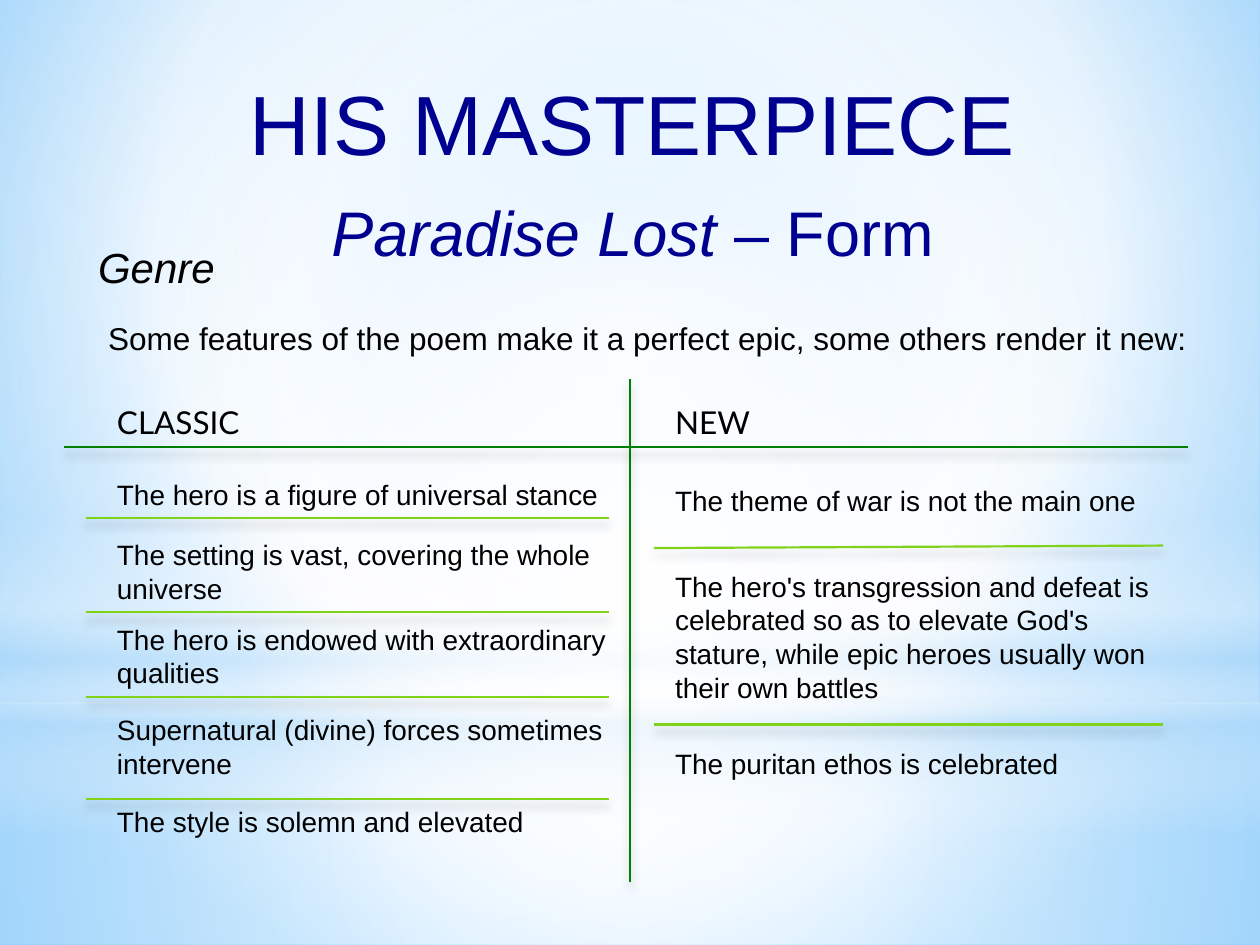
from lxml import etree
from pptx import Presentation
from pptx.dml.color import RGBColor
from pptx.enum.shapes import MSO_CONNECTOR, MSO_SHAPE
from pptx.enum.text import MSO_AUTO_SIZE, PP_ALIGN
from pptx.oxml import parse_xml
from pptx.oxml.ns import nsdecls, qn
from pptx.util import Inches, Pt

STRAIGHT = MSO_CONNECTOR.STRAIGHT
RECTANGLE = MSO_SHAPE.RECTANGLE
OVAL = MSO_SHAPE.OVAL
FIT_SHAPE = MSO_AUTO_SIZE.SHAPE_TO_FIT_TEXT
CENTER = PP_ALIGN.CENTER

NAVY, BLACK, GREEN, LIME = "000090", "000000", "008000", "81D31A"
WHITE, PALE = "FFFFFF", "B4DCFA"
MIDDLE = (50, 50, 50, 50)

CLASSIC_ROWS = [
    (0.59, "The hero is a figure of universal stance"),
    (1.07, "The setting is vast, covering the whole universe"),
    (1.74, "The hero is endowed with extraordinary qualities"),
    (2.46, "Supernatural (divine) forces sometimes intervene"),
    (3.19, "The style is solemn and elevated"),
]
NEW_ROWS = [
    (0.64, "The theme of war is not the main one"),
    (1.32, "The hero's transgression and defeat is celebrated so as to elevate "
           "God's stature, while epic heroes usually won their own battles"),
    (2.73, "The puritan ethos is celebrated"),
]
CLASSIC_RULES = [(y, y) for y in (0.96, 1.71, 2.38, 3.19)]
NEW_RULES = [(1.2, 1.18), (2.6, 2.6)]


def color(code):
    return RGBColor.from_string(code)


def gradient(stops, focus=None):
    marks = "".join(
        f'<a:gs pos="{place * 1000}"><a:srgbClr val="{code}">'
        f'<a:alpha val="{opacity * 1000}"/></a:srgbClr></a:gs>'
        for place, code, opacity in stops)
    if focus:
        sides = " ".join(f'{side}="{value * 1000}"' for side, value in zip("ltrb", focus))
        shade = f'<a:path path="circle"><a:fillToRect {sides}/></a:path>'
    else:
        shade = '<a:lin ang="5400000" scaled="0"/>'
    return (f'<a:gradFill {nsdecls("a")} rotWithShape="1">'
            f'<a:gsLst>{marks}</a:gsLst>{shade}</a:gradFill>')


def add_glow(page, kind, box, stops, focus=None):
    glow = page.shapes.add_shape(kind, *map(Inches, box))
    glow.shadow.inherit = False
    glow.line.fill.background()
    geometry = glow.element.spPr.find(qn("a:prstGeom"))
    geometry.addnext(parse_xml(gradient(stops, focus)))


def add_backdrop(page, box):
    left, top, width, height = box
    stops = [(0, "9ED5FF", 100), (60, WHITE, 100), (100, "5BB9FF", 100)]
    page.element.cSld.insert(0, parse_xml(
        f'<p:bg {nsdecls("p", "a")}><p:bgPr>{gradient(stops, (20, 10, 20, 60))}'
        '<a:effectLst/></p:bgPr></p:bg>'))
    horizon = 5.58
    add_glow(page, RECTANGLE, (left, top + horizon, width, height - horizon),
             [(0, WHITE, 91), (37, WHITE, 76), (100, PALE, 79)], MIDDLE)
    add_glow(page, RECTANGLE, (left, top, width, horizon),
             [(0, WHITE, 89), (48, WHITE, 62), (100, PALE, 79)], MIDDLE)
    add_glow(page, RECTANGLE, (left, top + 4.12, width, 2.5),
             [(0, WHITE, 0), (29, WHITE, 30), (45, PALE, 40),
              (55, WHITE, 26), (65, PALE, 60), (100, WHITE, 0)])
    add_glow(page, OVAL, (left, top + 1.75, width, horizon),
             [(0, WHITE, 100), (56, WHITE, 0)], MIDDLE)


def add_span(para, text, size, font="Arial", code=BLACK, italic=False):
    span = para.add_run()
    span.text = text
    span.font.size = Pt(size)
    span.font.name = font
    span.font.italic = italic
    span.font.color.rgb = color(code)


def add_frame(page, box):
    frame = page.shapes.add_textbox(*map(Inches, box)).text_frame
    frame.word_wrap = True
    return frame


def add_label(page, box, text, size, font="Arial", italic=False):
    frame = add_frame(page, box)
    frame.auto_size = FIT_SHAPE
    add_span(frame.paragraphs[0], text, size, font, italic=italic)


def add_rule(page, start, end, code):
    rule = page.shapes.add_connector(STRAIGHT, *map(Inches, start + end))
    rule.line.color.rgb = color(code)
    rule.line.width = Pt(1.25)
    effects = etree.SubElement(rule.element.spPr, qn("a:effectLst"))
    shadow = etree.SubElement(effects, qn("a:outerShdw"), blurRad=str(Pt(5)),
                              dist=str(Pt(4)), dir="5400000", rotWithShape="0")
    tint = etree.SubElement(shadow, qn("a:srgbClr"), val=BLACK)
    etree.SubElement(tint, qn("a:alpha"), val="20000")


def add_heading(page, box):
    frame = add_frame(page, box)
    title = frame.paragraphs[0]
    title.space_after = Pt(3)
    add_span(title, "HIS MASTERPIECE", 48, code=NAVY)
    subtitle = frame.add_paragraph()
    subtitle.space_before = Pt(9)
    add_span(subtitle, "Paradise Lost ", 36, code=NAVY, italic=True)
    add_span(subtitle, "– Form", 36, code=NAVY)
    for para in frame.paragraphs:
        para.alignment = CENTER


def add_introduction(page, box):
    left, top, width, height = box
    add_label(page, (left, top, width, 0.51), "Genre", 24, italic=True)
    add_label(page, (left + 0.08, top + 0.61, width, 0.4),
              "Some features of the poem make it a perfect epic, "
              "some others render it new:", 18)


def add_column(page, box, heading, rows, rules, rule_start, rule_end):
    left, top, width, height = box
    add_label(page, (left, top, width, 0.4), heading, 18, "Lato")
    for offset, text in rows:
        add_label(page, (left, top + offset, width, 0.37), text, 16)
    for first, last in rules:
        add_rule(page, (left + rule_start, top + first), (left + rule_end, top + last), LIME)


def add_comparison(page, box):
    left, top, width, height = box
    middle = left + 4.49
    add_rule(page, (middle, top), (middle, top + height), GREEN)
    add_rule(page, (left, top + 0.54), (left + width, top + 0.54), GREEN)
    add_column(page, (left + 0.32, top + 0.14, 4.15, height), "CLASSIC",
               CLASSIC_ROWS, CLASSIC_RULES, -0.15, 4)
    add_column(page, (left + 4.75, top + 0.14, 4.17, height), "NEW",
               NEW_ROWS, NEW_RULES, -0.07, 3.97)


def main():
    deck = Presentation()
    deck.slide_width, deck.slide_height = Inches(10), Inches(7.5)
    page = deck.slides.add_slide(deck.slide_layouts[6])
    add_backdrop(page, (0, 0, 10, 7.5))
    add_heading(page, (0.36, 0.52, 9.32, 1.63))
    add_introduction(page, (0.68, 1.87, 9.11, 1.01))
    add_comparison(page, (0.51, 3.01, 8.92, 3.99))
    deck.save("out.pptx")


if __name__ == "__main__":
    main()
